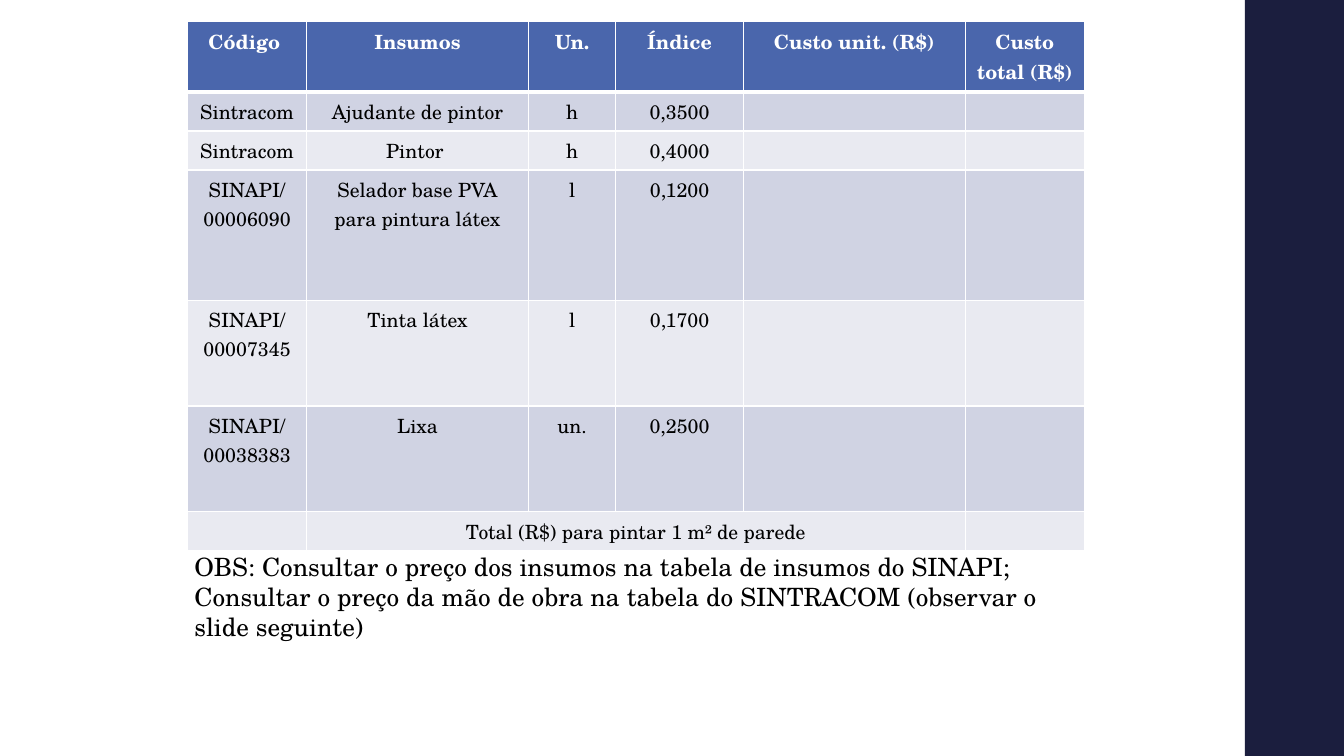
import pptx
import pptx.dml.color
import pptx.enum.shapes
import pptx.enum.text
import pptx.oxml
import pptx.oxml.ns
import pptx.util

RGB = pptx.dml.color.RGBColor
NAVY = RGB(0x1B, 0x1E, 0x3E)
BLUE = RGB(0x4A, 0x66, 0xAC)
DARK = RGB(0xD0, 0xD3, 0xE3)
LIGHT = RGB(0xE9, 0xEA, 0xF1)
WHITE = RGB(0xFF, 0xFF, 0xFF)
BLACK = RGB(0, 0, 0)

HEAD = ["Código ", "Insumos", "Un.", "Índice", "Custo unit. (R$)", "Custo total (R$)"]
ITEMS = [
    ["Sintracom", "Ajudante de pintor", "h", "0,3500", "", ""],
    ["Sintracom", "Pintor ", "h", "0,4000", "", ""],
    ["SINAPI/ 00006090", "Selador base PVA para pintura látex", "l", "0,1200", "", ""],
    ["SINAPI/ 00007345", "Tinta látex", "l", "0,1700", "", ""],
    ["SINAPI/ 00038383", "Lixa", "un.", "0,2500", "", ""],
]
TOTAL = ["", "Total (R$) para pintar 1 m² de parede", "", "", "", ""]
NOTES = [
    "OBS: Consultar o preço dos insumos na tabela de insumos do SINAPI;",
    "Consultar o preço da mão de obra na tabela do SINTRACOM (observar o slide seguinte)",
]
WIDTHS = [7.1, 13.2, 5.2, 7.6, 13.2, 7.1]
HEIGHTS = [3.4, 1.9, 1.9, 7.75, 6.3, 6.3, 1.9]


def unit(count):
    """Turn grid units, 80 columns by 45 rows, into a length."""
    return pptx.util.Inches(count / 6)


class Page:
    face = "TeX Gyre Schola"

    def __init__(self, deck):
        self.slide = deck.slides.add_slide(deck.slide_layouts[6])
        self.shapes = self.slide.shapes

    def style(self, para, size, color, bold=False):
        font = para.font
        font.name, font.size, font.bold = self.face, pptx.util.Pt(size), bold
        font.color.rgb = color

    def band(self, box, color):
        kind = pptx.enum.shapes.MSO_SHAPE.RECTANGLE
        band = self.shapes.add_shape(kind, *map(unit, box))
        band.shadow.inherit = False
        band.fill.solid()
        band.fill.fore_color.rgb = color
        band.line.fill.background()

    def text(self, box, lines, size):
        frame = self.shapes.add_textbox(*map(unit, box)).text_frame
        frame.word_wrap = True
        frame.auto_size = pptx.enum.text.MSO_AUTO_SIZE.SHAPE_TO_FIT_TEXT
        frame.text = "\n".join(lines)
        for para in frame.paragraphs:
            self.style(para, size, BLACK)

    def border(self, cell, sides):
        """Draw white lines, given as points for left, right, top and bottom."""
        props = cell._tc.get_or_add_tcPr()
        for spot, (side, width) in enumerate(zip("LRTB", sides)):
            line = pptx.oxml.parse_xml(
                f'<a:ln{side} {pptx.oxml.ns.nsdecls("a")} w="{pptx.util.Pt(width)}">'
                f'<a:solidFill><a:srgbClr val="{WHITE}"/></a:solidFill></a:ln{side}>')
            props.insert(spot, line)

    def cell(self, cell, text, row):
        head = row == 0
        cell.fill.solid()
        cell.fill.fore_color.rgb = BLUE if head else DARK if row % 2 else LIGHT
        self.border(cell, (1, 1, 3 if row == 1 else 1, 3 if head else 1))
        cell.text = text
        para = cell.text_frame.paragraphs[0]
        para.alignment = pptx.enum.text.PP_ALIGN.CENTER
        self.style(para, 14, WHITE if head else BLACK, head)

    def table(self, left, top, widths, heights, rows):
        box = map(unit, (left, top, sum(widths), sum(heights)))
        table = self.shapes.add_table(len(rows), len(widths), *box).table
        for column, width in zip(table.columns, widths):
            column.width = unit(width)
        for row, (height, texts) in enumerate(zip(heights, rows)):
            table.rows[row].height = unit(height)
            for col, text in enumerate(texts):
                self.cell(table.cell(row, col), text, row)
        return table


def main():
    deck = pptx.Presentation()
    deck.slide_width, deck.slide_height = unit(80), unit(45)
    page = Page(deck)
    page.band((74.1, 0, 5.9, 45), NAVY)
    costs = page.table(11.16, 1.25, WIDTHS, HEIGHTS, [HEAD, *ITEMS, TOTAL])
    last = len(HEIGHTS) - 1
    costs.cell(last, 1).merge(costs.cell(last, 4))
    page.text((10.98, 32.52, 54.3, 6.06), NOTES, 18)
    deck.save("out.pptx")


if __name__ == "__main__":
    main()
